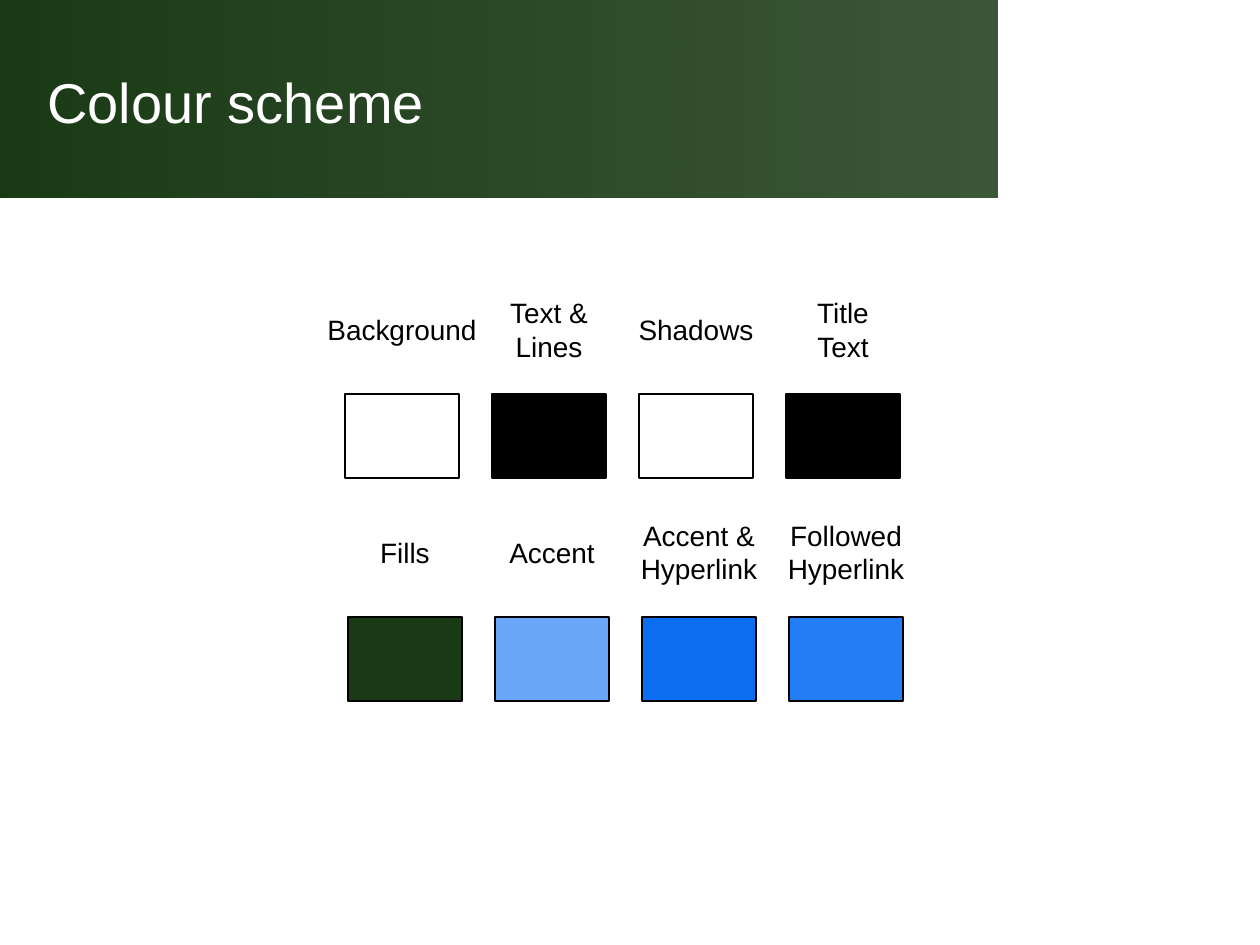
from dataclasses import dataclass

import pptx
import pptx.dml.color
import pptx.enum.shapes
import pptx.enum.text
import pptx.oxml
import pptx.oxml.ns
import pptx.util

PX_PER_INCH = 126
FONT = "Arial"
COLORS = {
    "white": "FFFFFF",
    "black": "000000",
    "green": "1A3A15",
    "light_blue": "6BA7F8",
    "blue": "0B6DEF",
    "mid_blue": "237DF5",
}
SWATCH_W, SWATCH_H, PITCH = 114, 84, 147
LABEL_RISE = 65
LINE_H, LABEL_PAD = 34, 13


@dataclass
class Swatch:
    label: str
    label_w: int
    color: str


@dataclass
class Row:
    x: int
    y: int
    swatches: list[Swatch]


ROWS = [
    Row(345, 394, [
        Swatch("Background", 176, "white"),
        Swatch("Text &\nLines", 108, "black"),
        Swatch("Shadows", 142, "white"),
        Swatch("Title\vText", 82, "black"),
    ]),
    Row(348, 617, [
        Swatch("Fills", 78, "green"),
        Swatch("Accent", 114, "light_blue"),
        Swatch("Accent &\nHyperlink", 146, "blue"),
        Swatch("Followed\nHyperlink", 146, "mid_blue"),
    ]),
]


def px(n: float) -> int:
    return pptx.util.Emu(round(n * 914400 / PX_PER_INCH))


def rgb(name: str) -> pptx.dml.color.RGBColor:
    return pptx.dml.color.RGBColor.from_string(COLORS[name])


def add_rect(s, x: int, y: int, w: int, h: int):
    sp = s.shapes.add_shape(
        pptx.enum.shapes.MSO_SHAPE.RECTANGLE, px(x), px(y), px(w), px(h))
    sp.shadow.inherit = False
    return sp


def add_text(s, text: str, x: float, y: float, w: int, h: int, size: int, color: str):
    tf = s.shapes.add_textbox(px(x), px(y), px(w), px(h)).text_frame
    tf.text = text
    tf.vertical_anchor = pptx.enum.text.MSO_ANCHOR.MIDDLE
    for p in tf.paragraphs:
        p.font.name = FONT
        p.font.size = pptx.util.Pt(size)
        p.font.color.rgb = rgb(color)
    return tf


def add_banner(s) -> None:
    sp = add_rect(s, 0, 0, 998, 198)
    sp.line.fill.background()
    sp.fill.gradient()
    sp.fill.gradient_angle = 0
    for stop in sp.fill.gradient_stops:
        stop.color.rgb = rgb("green")
    end_color = sp._element.xpath(".//a:gs/a:srgbClr")[-1]
    alpha = pptx.oxml.parse_xml(
        f'<a:alpha {pptx.oxml.ns.nsdecls("a")} val="85000"/>')
    end_color.append(alpha)
    tf = add_text(s, "Colour scheme", 35, 38, 942, 127, 32, "white")
    tf.word_wrap = True


def add_swatch(s, swatch: Swatch, x: int, y: int) -> None:
    sp = add_rect(s, x, y, SWATCH_W, SWATCH_H)
    sp.fill.solid()
    sp.fill.fore_color.rgb = rgb(swatch.color)
    sp.line.color.rgb = rgb("black")
    sp.line.width = pptx.util.Pt(0.75)
    h = LABEL_PAD + LINE_H * len(swatch.label.splitlines())
    tf = add_text(s, swatch.label, x + (SWATCH_W - swatch.label_w) / 2,
                  y - LABEL_RISE - h / 2, swatch.label_w, h, 16, "black")
    tf.word_wrap = False
    tf.auto_size = pptx.enum.text.MSO_AUTO_SIZE.SHAPE_TO_FIT_TEXT
    for p in tf.paragraphs:
        p.alignment = pptx.enum.text.PP_ALIGN.CENTER


def main() -> None:
    prs = pptx.Presentation()
    prs.slide_width, prs.slide_height = px(1260), px(945)
    s = prs.slides.add_slide(prs.slide_layouts[6])
    add_banner(s)
    for row in ROWS:
        for i, swatch in enumerate(row.swatches):
            add_swatch(s, swatch, row.x + i * PITCH, row.y)
    prs.save("out.pptx")


if __name__ == "__main__":
    main()
